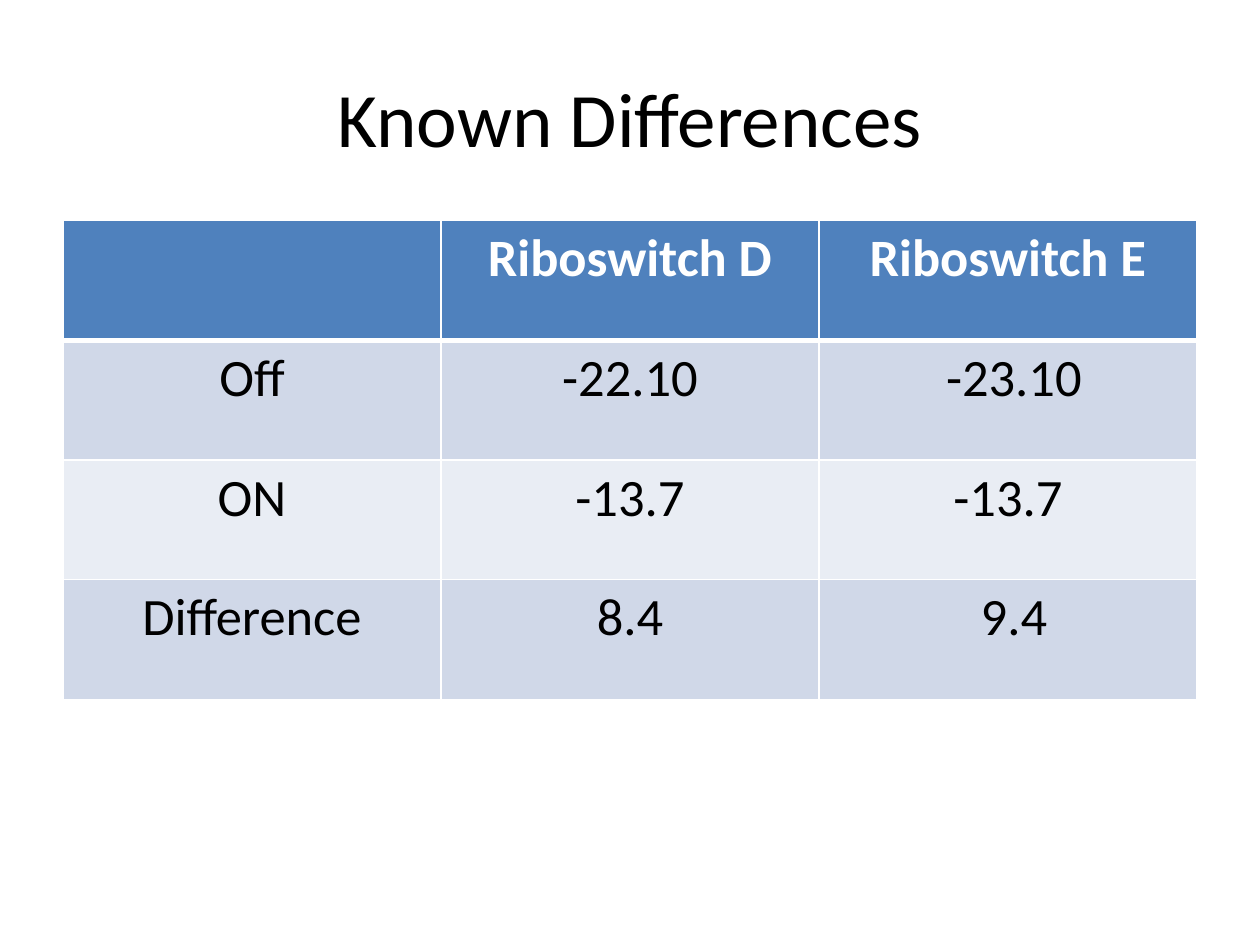
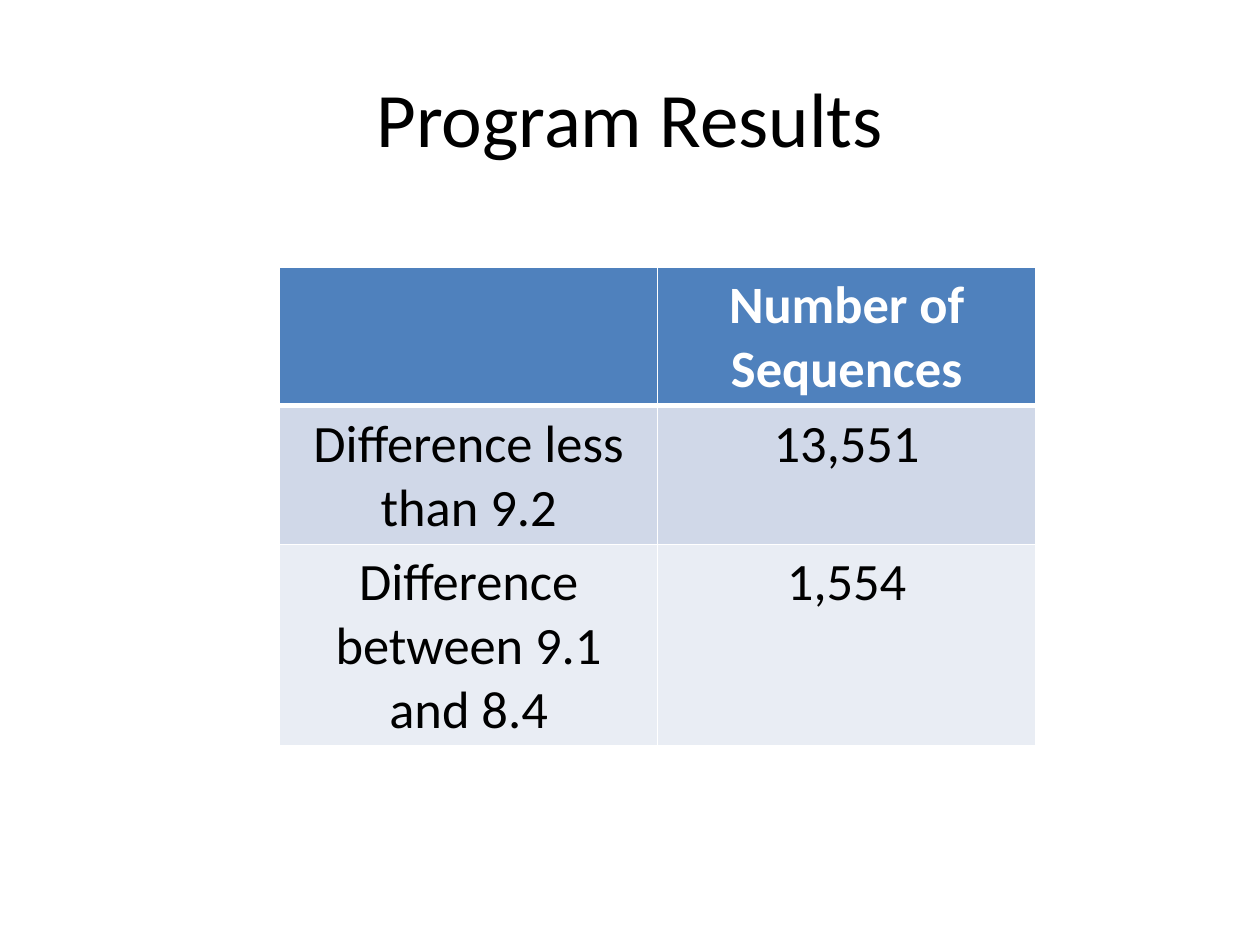
"""Build two slides of riboswitch energy differences and sequence counts."""
from dataclasses import dataclass

from lxml import etree
from pptx import Presentation
from pptx.dml.color import RGBColor
from pptx.enum.text import MSO_ANCHOR, PP_ALIGN
from pptx.oxml.ns import qn
from pptx.util import Emu, Pt

MIDDLE = MSO_ANCHOR.MIDDLE
CENTER = PP_ALIGN.CENTER
SCALE = 9144
FONT = "Calibri"
COLORS = {
    "text": "000000",
    "light": "FFFFFF",
    "head": "4F81BD",
    "odd": "D0D8E8",
    "even": "E9EDF4",
}
COL_W, ROW_H = 300, 95
THIN, THICK = 1, 3


@dataclass
class Page:
    """One slide: its title, its table's corner and the table's rows."""
    title: str
    left: int
    top: int
    rows: list[list[str]]


PAGES = [
    Page("Known Differences", 50, 175, [
        ["", "Riboswitch D", "Riboswitch E"],
        ["Off", "-22.10", " -23.10"],
        ["ON", "-13.7", "-13.7"],
        ["Difference", "8.4", " 9.4"],
    ]),
    Page("Program Results", 222, 212, [
        ["", "Number of Sequences"],
        ["Difference less than 9.2", "13,551"],
        ["Difference between 9.1 and 8.4", "1,554"],
    ]),
]


def px(count: int) -> Emu:
    """Turn px into EMU."""
    return Emu(count * SCALE)


def rgb(name: str) -> RGBColor:
    """Look up a named colour."""
    return RGBColor.from_string(COLORS[name])


def style(frame, size: int, color: str, bold: bool = False) -> None:
    """Centre the text of a frame and format its runs."""
    for para in frame.paragraphs:
        para.alignment = CENTER
        for run in para.runs:
            run.font.name = FONT
            run.font.size = Pt(size)
            run.font.bold = bold
            run.font.color.rgb = rgb(color)


def add_title(slide, text: str) -> None:
    """Add the title that both slides share."""
    frame = slide.shapes.add_textbox(px(50), px(30), px(900), px(125)).text_frame
    frame.word_wrap = True
    frame.vertical_anchor = MIDDLE
    frame.text = text
    style(frame, 44, "text")


def add_edges(cell, above: int, below: int) -> None:
    """Draw white lines on the four sides of a cell."""
    props = cell._tc.get_or_add_tcPr()
    sides = {"lnL": THIN, "lnR": THIN, "lnT": above, "lnB": below}
    for place, (side, width) in enumerate(sides.items()):
        line = etree.Element(qn(f"a:{side}"), w=str(Pt(width)))
        fill = etree.SubElement(line, qn("a:solidFill"))
        etree.SubElement(fill, qn("a:srgbClr"), val=COLORS["light"])
        props.insert(place, line)


def add_grid(slide, page: Page) -> None:
    """Add the banded table with its header row."""
    high, wide = len(page.rows), len(page.rows[0])
    table = slide.shapes.add_table(
        high, wide, px(page.left), px(page.top),
        px(wide * COL_W), px(high * ROW_H)).table
    for y, row in enumerate(page.rows):
        head = y == 0
        band = "head" if head else "odd" if y % 2 else "even"
        for x, text in enumerate(row):
            cell = table.cell(y, x)
            cell.text_frame.text = text
            style(cell.text_frame, 30, "light" if head else "text", head)
            cell.fill.solid()
            cell.fill.fore_color.rgb = rgb(band)
            add_edges(cell, THICK if y == 1 else THIN, THICK if head else THIN)


def main() -> None:
    """Build the slides and save them."""
    deck = Presentation()
    deck.slide_width, deck.slide_height = px(1000), px(750)
    for page in PAGES:
        slide = deck.slides.add_slide(deck.slide_layouts[6])
        add_title(slide, page.title)
        add_grid(slide, page)
    deck.save("out.pptx")


if __name__ == "__main__":
    main()
